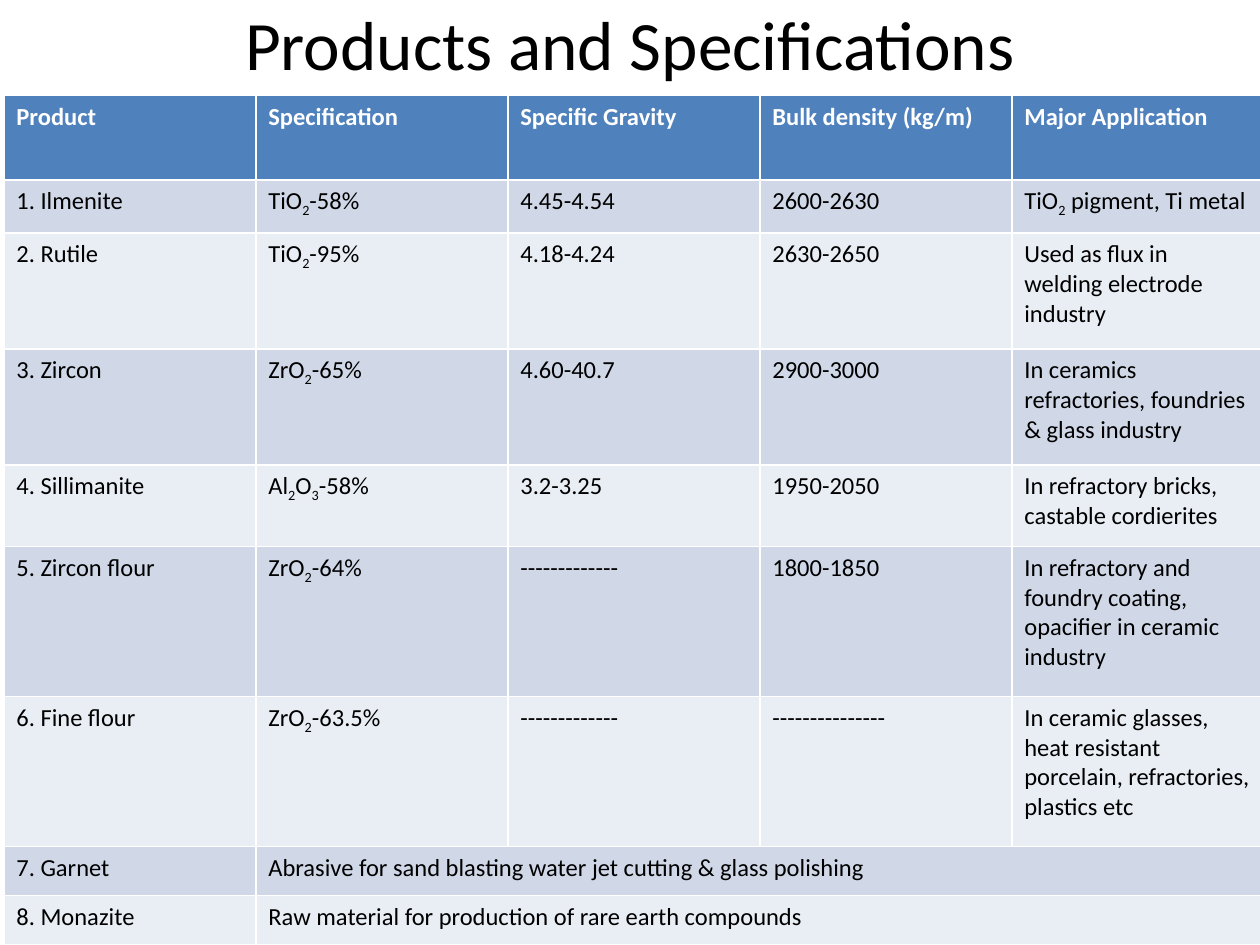
from pptx import Presentation
from pptx.dml.color import RGBColor
from pptx.enum.text import MSO_ANCHOR, PP_ALIGN
from pptx.util import Inches, Pt

CENTER = PP_ALIGN.CENTER
MIDDLE = MSO_ANCHOR.MIDDLE
TITLE_ONLY = 5
FONT = "Calibri"
COLORS = {
    "header": "4F81BD",
    "odd": "D0D8E8",
    "even": "E9EDF4",
    "white": "FFFFFF",
    "text": "000000",
}
HEADERS = ["Product", "Specification", "Specific Gravity",
           "Bulk density (kg/m)", "Major Application"]
# An underscore marks the next character as a subscript.
# A row with two entries has its second cell merged to the right edge.
PRODUCTS = [
    (0.42, ["1. Ilmenite", "TiO_2-58%", "4.45-4.54", "2600-2630",
            "TiO_2 pigment, Ti metal"]),
    (0.92, ["2. Rutile", "TiO_2-95%", "4.18-4.24", "2630-2650",
            "Used as flux in welding electrode industry"]),
    (0.92, ["3. Zircon", "ZrO_2-65%", "4.60-40.7", "2900-3000",
            "In ceramics refractories, foundries & glass industry"]),
    (0.65, ["4. Sillimanite", "Al_2O_3-58%", "3.2-3.25", "1950-2050",
            "In refractory bricks, castable cordierites"]),
    (1.19, ["5. Zircon flour", "ZrO_2-64%", "-" * 13, "1800-1850",
            "In refractory and foundry coating, opacifier in ceramic industry"]),
    (1.19, ["6. Fine flour", "ZrO_2-63.5%", "-" * 13, "-" * 15,
            "In ceramic glasses, heat resistant porcelain, refractories, "
            "plastics etc"]),
    (0.39, ["7. Garnet",
            "Abrasive for sand blasting water jet cutting & glass polishing"]),
    (0.39, ["8. Monazite",
            "Raw material for production of rare earth compounds"]),
]


def add_run(p, text, size, color="text", bold=False, subscript=False):
    r = p.add_run()
    r.text = text
    r.font.name = FONT
    r.font.size = Pt(size)
    r.font.bold = bold
    r.font.color.rgb = RGBColor.from_string(COLORS[color])
    if subscript:
        r._r.get_or_add_rPr().set("baseline", "-25000")


def write_text(tf, text, **fmt):
    """Write one paragraph, lowering each character that follows an underscore."""
    p = tf.paragraphs[0]
    first, *rest = text.split("_")
    add_run(p, first, **fmt)
    for part in rest:
        add_run(p, part[0], subscript=True, **fmt)
        if part[1:]:
            add_run(p, part[1:], **fmt)
    return p


def place_title(slide, text, left, top, width, height):
    title = slide.shapes.title
    title.left, title.top = Inches(left), Inches(top)
    title.width, title.height = Inches(width), Inches(height)
    tf = title.text_frame
    tf.vertical_anchor = MIDDLE
    write_text(tf, text, size=39.6).alignment = CENTER


def place_product_table(slide, left, top, width, header_height):
    rows = [(header_height, HEADERS)] + PRODUCTS
    n_cols = len(HEADERS)
    height = sum(h for h, _ in rows)
    table = slide.shapes.add_table(len(rows), n_cols, Inches(left), Inches(top),
                                   Inches(width), Inches(height)).table
    for col in table.columns:
        col.width = Inches(width / n_cols)
    for i, (row_height, texts) in enumerate(rows):
        table.rows[i].height = Inches(row_height)
        is_header = i == 0
        fill = "header" if is_header else "odd" if i % 2 else "even"
        for j in range(n_cols):
            cell = table.cell(i, j)
            cell.fill.solid()
            cell.fill.fore_color.rgb = RGBColor.from_string(COLORS[fill])
            if j < len(texts):
                write_text(cell.text_frame, texts[j], size=14, bold=is_header,
                           color="white" if is_header else "text")
        if len(texts) < n_cols:
            table.cell(i, len(texts) - 1).merge(table.cell(i, n_cols - 1))


def main():
    prs = Presentation()
    prs.slide_width, prs.slide_height = Inches(10), Inches(7.5)
    slide = prs.slides.add_slide(prs.slide_layouts[TITLE_ONLY])
    place_title(slide, "Products and Specifications", 0.5, 0, 9, 0.68)
    place_product_table(slide, 0.03, 0.76, 10, header_height=0.67)
    prs.save("out.pptx")


if __name__ == "__main__":
    main()
